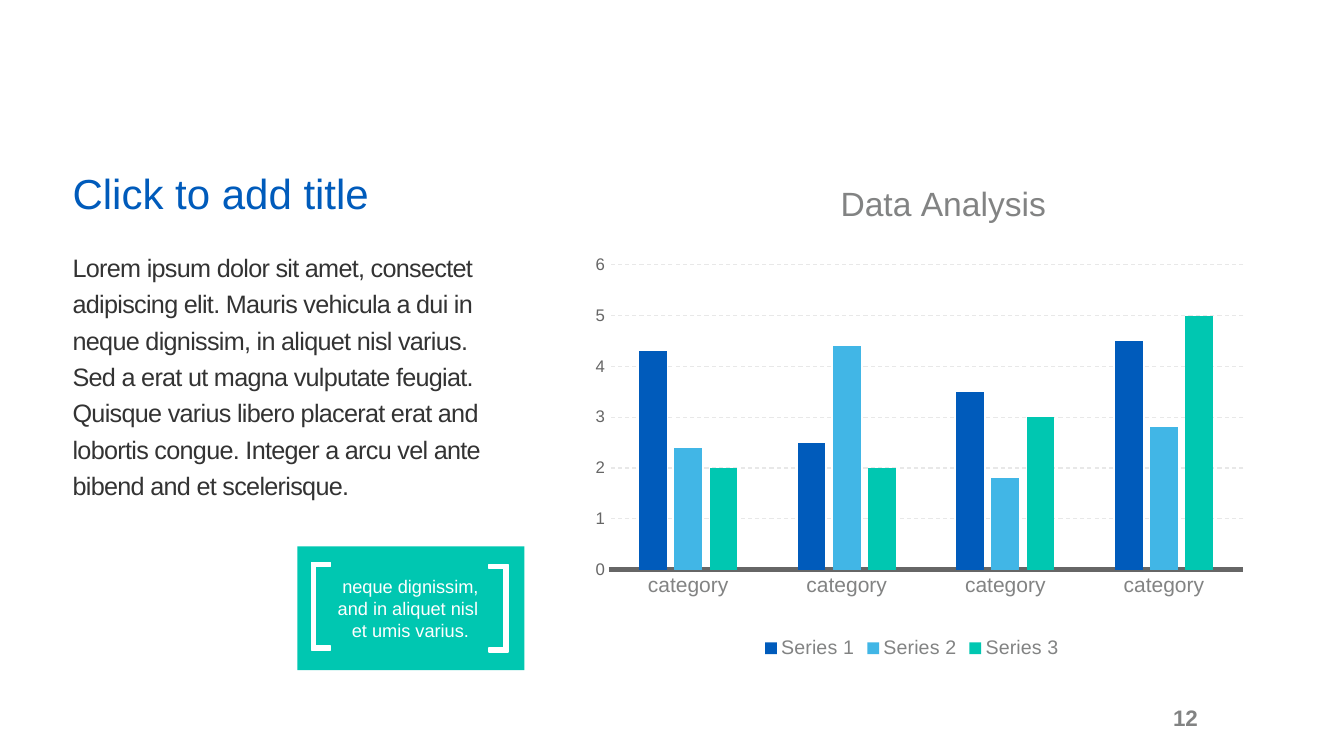
from lxml.etree import SubElement
from pptx import Presentation
from pptx.chart.data import CategoryChartData
from pptx.dml.color import RGBColor
from pptx.enum.chart import XL_CHART_TYPE as ChartType, XL_LEGEND_POSITION as LegendPos, XL_TICK_MARK as Tick
from pptx.enum.dml import MSO_LINE as Dash
from pptx.enum.shapes import MSO_SHAPE as Preset
from pptx.enum.text import MSO_ANCHOR as Anchor, MSO_AUTO_SIZE as AutoSize, PP_ALIGN as Align
from pptx.oxml.ns import qn
from pptx.oxml.xmlchemy import OxmlElement
from pptx.util import Inches, Pt

COLORS = {
    "blue": "005BBB", "sky": "41B6E6", "teal": "00C7B1", "white": "FFFFFF",
    "text": "333333", "axis": "666666", "muted": "828383", "grid": "E8E8E8",
}
FONT = "Arial"
BODY = (
    "Lorem ipsum dolor sit amet, consectet adipiscing elit. Mauris vehicula a dui in "
    "neque dignissim, in aliquet nisl varius. Sed a erat ut magna vulputate feugiat. "
    "Quisque varius libero placerat erat and lobortis congue. Integer a arcu vel ante "
    "bibend and et scelerisque."
)
CATEGORIES = ["category"] * 4
SERIES = [
    ("Series 1", "blue", (4.3, 2.5, 3.5, 4.5)),
    ("Series 2", "sky", (2.4, 4.4, 1.8, 2.8)),
    ("Series 3", "teal", (2, 2, 3, 5)),
]


def rgb(color):
    return RGBColor.from_string(COLORS[color])


def style_font(font, size, color, bold=False):
    font.name, font.size, font.bold = FONT, Pt(size), bold
    font.color.rgb = rgb(color)


def place_in_chart(element, index=0, inner=False, **fractions):
    """Give a chart part a manual layout, in fractions of the chart's size."""
    layout = element.find(qn("c:layout"))
    if layout is None:
        layout = OxmlElement("c:layout")
        element.insert(index, layout)
    manual = SubElement(layout, qn("c:manualLayout"))
    if inner:
        SubElement(manual, qn("c:layoutTarget")).set("val", "inner")
    for axis in "xy":
        SubElement(manual, qn(f"c:{axis}Mode")).set("val", "edge")
    for key, value in fractions.items():
        SubElement(manual, qn(f"c:{key}")).set("val", str(value))


class SlideBuilder:
    def __init__(self, slide):
        self.slide = slide
        self.shapes = slide.shapes

    def fill_text(self, shape, lines, size, color, align=Align.LEFT, anchor=Anchor.TOP,
                  bold=False, line_spacing=None, tracking=None):
        frame = shape.text_frame
        frame.word_wrap, frame.auto_size = True, AutoSize.NONE
        frame.vertical_anchor = anchor
        paragraph = frame.paragraphs[0]
        props = paragraph._p.get_or_add_pPr()
        props.set("marL", "0")
        props.set("indent", "0")
        SubElement(props, qn("a:buNone"))
        paragraph.alignment = align
        paragraph.space_before = Pt(0)
        if line_spacing:
            paragraph.line_spacing = line_spacing
        for number, line in enumerate(lines):
            if number:
                paragraph.add_line_break()
            run = paragraph.add_run()
            run.text = line
            style_font(run.font, size, color, bold)
            if tracking:
                run._r.get_or_add_rPr().set("spc", str(tracking))

    def placeholder(self, index, box, *args, **style):
        shape = self.slide.placeholders[index]
        shape.left, shape.top, shape.width, shape.height = map(Inches, box)
        self.fill_text(shape, *args, **style)

    def text(self, box, *args, **style):
        self.fill_text(self.shapes.add_textbox(*map(Inches, box)), *args, **style)

    def panel(self, box, color):
        panel = self.shapes.add_shape(Preset.RECTANGLE, *map(Inches, box))
        panel.shadow.inherit = False
        panel.fill.solid()
        panel.fill.fore_color.rgb = rgb(color)
        panel.line.fill.background()

    def bracket(self, outer_x, top, direction):
        """Draw a square bracket; direction 1 opens to the right, -1 to the left."""
        arm, height, thick = 0.19, 0.87, 0.04
        outline = [(arm, 0), (0, 0), (0, height), (arm, height),
                   (arm, height - thick), (thick, height - thick), (thick, thick), (arm, thick)]
        points = [(Inches(outer_x + direction * x), Inches(top + y)) for x, y in outline]
        builder = self.shapes.build_freeform(*points[0])
        builder.add_line_segments(points[1:], close=True)
        bracket = builder.convert_to_shape()
        bracket.shadow.inherit = False
        bracket.fill.solid()
        bracket.fill.fore_color.rgb = rgb("white")
        bracket.line.color.rgb = rgb("white")
        bracket.line.width = Pt(1)

    def column_chart(self, box, title):
        data = CategoryChartData()
        data.categories = CATEGORIES
        for name, _, values in SERIES:
            data.add_series(name, values)
        chart = self.shapes.add_chart(ChartType.COLUMN_CLUSTERED, *map(Inches, box), data).chart
        style_font(chart.font, 10, "axis")

        chart.has_title = True
        heading = chart.chart_title.text_frame.paragraphs[0].add_run()
        heading.text = title
        style_font(heading.font, 24, "muted")
        place_in_chart(chart.chart_title._element, index=1, x=0.39, y=0.01)

        chart.has_legend = True
        chart.legend.position = LegendPos.BOTTOM
        chart.legend.include_in_layout = False
        style_font(chart.legend.font, 14, "muted")

        plot = chart.plots[0]
        plot.gap_width, plot.overlap, plot.vary_by_categories = 219, -27, False
        for series, (_, color, _) in zip(plot.series, SERIES):
            series.format.fill.solid()
            series.format.fill.fore_color.rgb = rgb(color)
        place_in_chart(chart._chartSpace.chart.plotArea, inner=True, x=0.07, y=0.19, w=0.9, h=0.62)

        categories, values = chart.category_axis, chart.value_axis
        for axis, size, color in ((categories, 15, "muted"), (values, 12, "axis")):
            axis.major_tick_mark = axis.minor_tick_mark = Tick.NONE
            style_font(axis.tick_labels.font, size, color)
        categories.format.line.color.rgb = rgb("axis")
        categories.format.line.width = Pt(3.25)
        values.minimum_scale, values.maximum_scale, values.major_unit = 0, 6, 1
        values.format.line.fill.background()
        grid = values.major_gridlines.format.line
        grid.color.rgb = rgb("grid")
        grid.width, grid.dash_style = Pt(0.75), Dash.DASH


def main():
    deck = Presentation()
    deck.slide_width, deck.slide_height = Inches(13.33), Inches(7.5)
    page = SlideBuilder(deck.slides.add_slide(deck.slide_layouts[1]))

    page.placeholder(0, (0.62, 1.44, 4.67, 0.78), ["Click to add title"], 30, "blue",
                     anchor=Anchor.BOTTOM, line_spacing=0.9)
    page.placeholder(1, (0.62, 2.39, 4.38, 3.03), [BODY], 18, "text",
                     line_spacing=Pt(26), tracking=-50)
    page.column_chart((5.55, 1.7, 6.99, 4.88), "Data Analysis")

    page.panel((2.95, 5.42, 2.25, 1.23), "teal")
    page.bracket(3.09, 5.58, 1)
    page.bracket(5.04, 5.6, -1)
    page.text((3.21, 5.66, 1.72, 0.76), ["neque dignissim, and in aliquet nisl ", "et umis varius."],
              13, "white", align=Align.CENTER)
    page.text((11.25, 6.83, 0.73, 0.58), ["12"], 16, "muted",
              align=Align.RIGHT, anchor=Anchor.MIDDLE, bold=True)

    deck.save("out.pptx")


if __name__ == "__main__":
    main()
